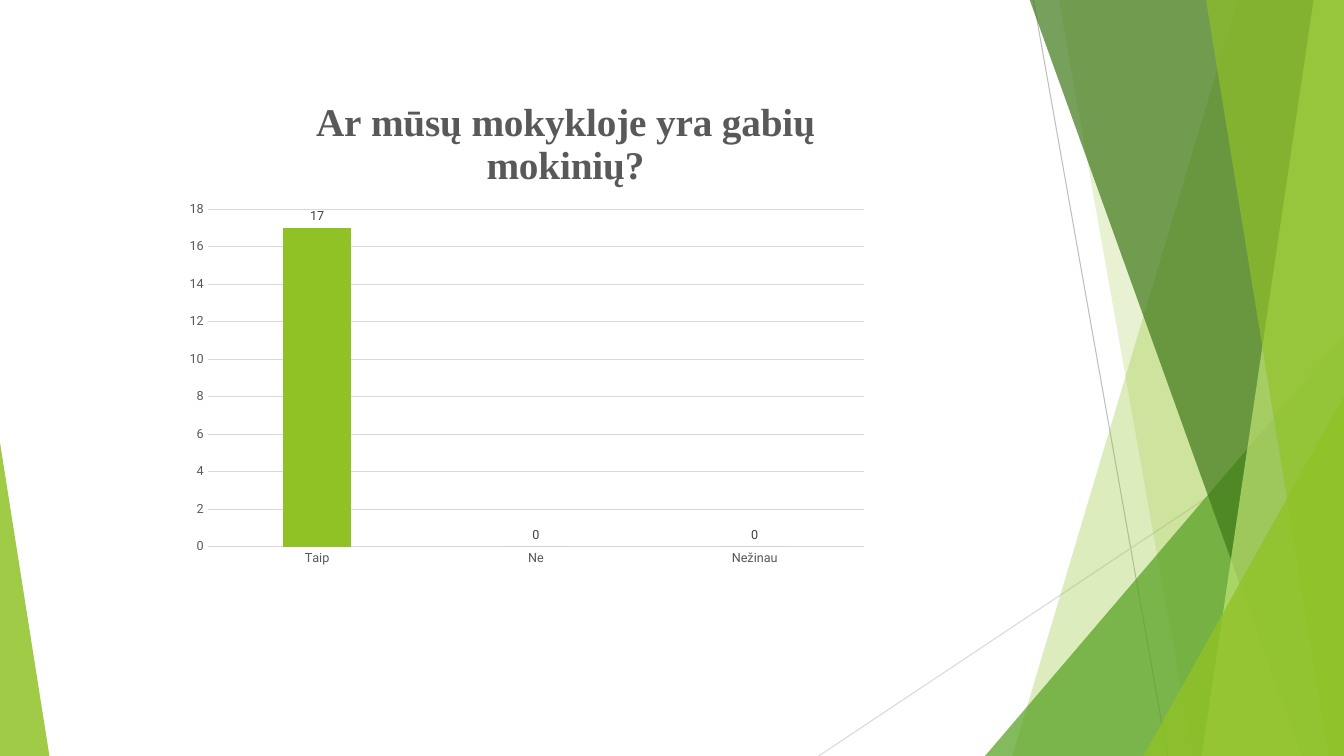
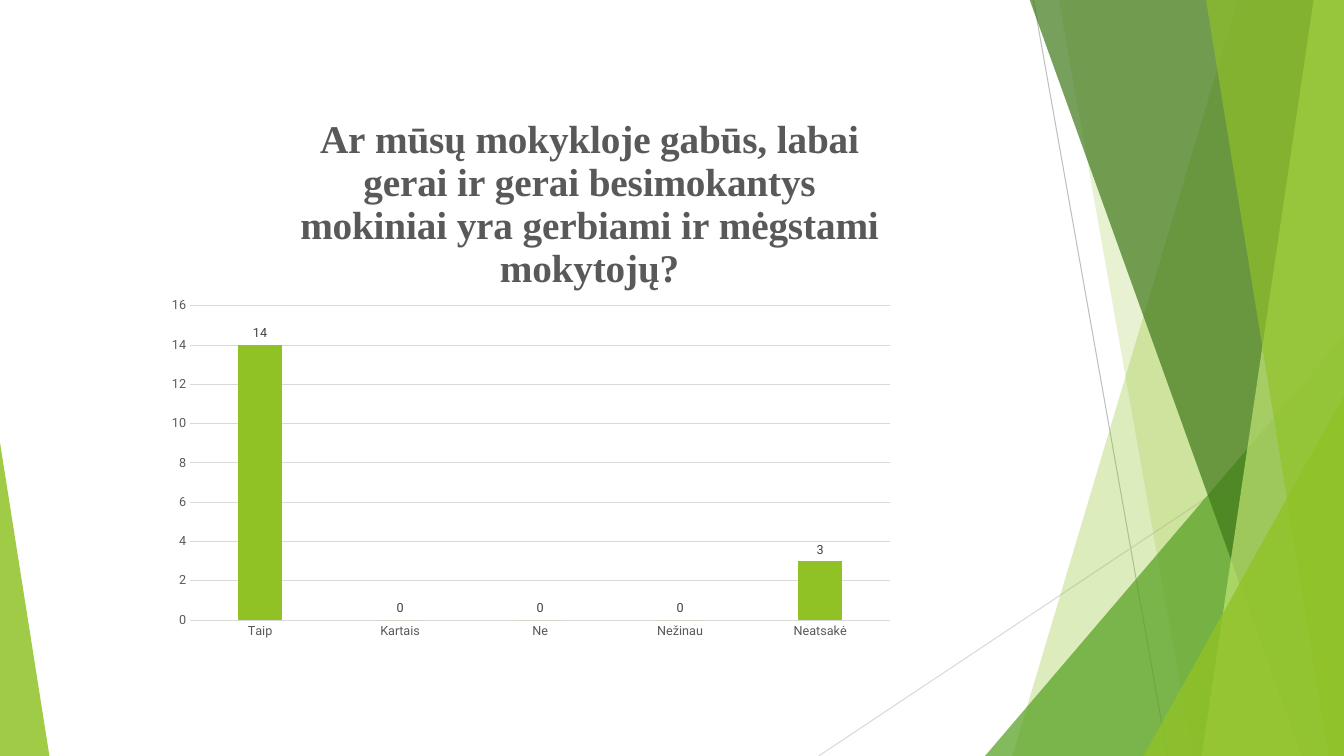
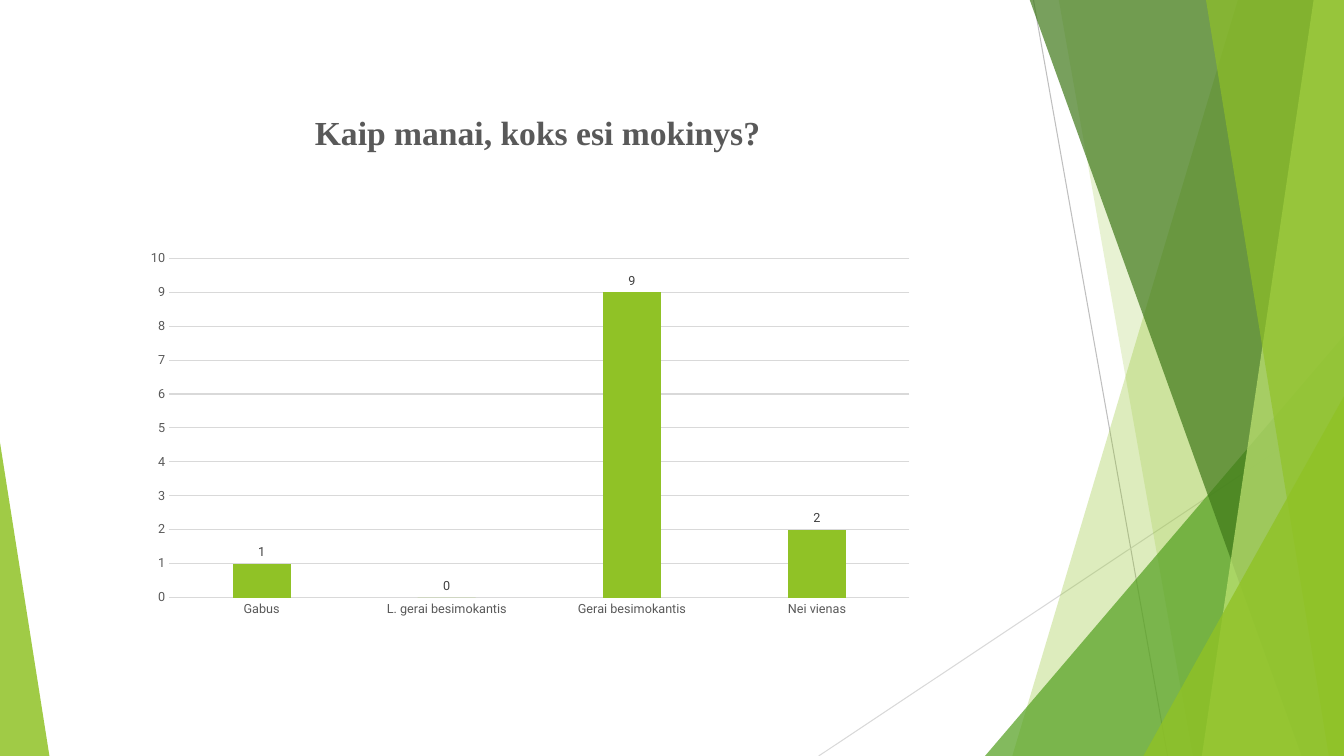
import dataclasses
import pptx
import pptx.chart.data
import pptx.dml.color
import pptx.enum.chart
import pptx.enum.shapes
import pptx.oxml
import pptx.oxml.ns
import pptx.util

Inches, Pt = pptx.util.Inches, pptx.util.Pt
RGB = pptx.dml.color.RGBColor.from_string
qn = pptx.oxml.ns.qn


@dataclasses.dataclass
class Theme:
    """Colours, fonts and type sizes of the deck."""
    lime: str = "90C226"
    leaf: str = "54A021"
    moss: str = "3F7819"
    pale: str = "C0E474"
    rule: str = "D9D9D9"
    gray: str = "BFBFBF"
    text: str = "595959"
    label: str = "404040"
    body: str = "Roboto"
    head: str = "Times New Roman"
    small: float = 9
    base: float = 10
    thin: float = 0.75


theme = Theme()
wide, high, top = 13.33, 7.5, -0.01


def style(font, size, color, name=theme.body, bold=False):
    """Set the size, colour, face and weight of a font."""
    font.size, font.name, font.bold = Pt(size), name, bold
    font.color.rgb = RGB(color)


def place(parent, index, **box):
    """Give a chart part a fixed place, in shares of the chart."""
    for old in parent.findall(qn("c:layout")):
        parent.remove(old)
    inner = '<c:layoutTarget val="inner"/>' if "w" in box else ""
    modes = "".join(f'<c:{key}Mode val="edge"/>' for key in "xy")
    sizes = "".join(f'<c:{key} val="{val}"/>' for key, val in box.items())
    parent.insert(index, pptx.oxml.parse_xml(
        f'<c:layout {pptx.oxml.ns.nsdecls("c")}><c:manualLayout>'
        f'{inner}{modes}{sizes}</c:manualLayout></c:layout>'))


deck = pptx.Presentation()
deck.slide_width, deck.slide_height = Inches(wide), Inches(high)
blank = deck.slide_layouts[6]

# Question, type size, title place, chart box, plot box, axis top and step, answers
polls = [
    ("Ar mūsų mokykloje yra gabių mokinių?", 28, (0.19, 0.02),
     (1.74, 0.8, 6.97, 4.91), (0.046, 0.26, 0.934, 0.682), 18, 2,
     {"Taip": 17, "Ne": 0, "Nežinau": 0}),
    ("Ar mūsų mokykloje gabūs, labai gerai ir gerai besimokantys mokiniai "
     "yra gerbiami ir mėgstami mokytojų?", 28, (0.2, 0.02),
     (1.37, 0.94, 7.69, 5.93), (0.067, 0.353, 0.903, 0.526), 16, 2,
     {"Taip": 14, "Kartais": 0, "Ne": 0, "Nežinau": 0, "Neatsakė": 3}),
    ("Kaip manai, koks esi mokinys?", 24, (0.22, 0.04),
     (1.34, 0.82, 7.83, 5.5), (0.043, 0.317, 0.938, 0.612), 10, 1,
     {"Gabus": 1, "L. gerai besimokantis": 0, "Gerai besimokantis": 9,
      "Nei vienas": 2}),
]
slides = [deck.slides.add_slide(blank) for poll in polls]

# Shared artwork: drawn as one group, then moved to the slide master
art = slides[0].shapes.add_group_shape()
for ends, color in [((10.25, 0, 11.58, high), theme.gray),
                    ((wide, 4.03, 8.12, high), theme.rule)]:
    line = art.shapes.add_connector(
        pptx.enum.shapes.MSO_CONNECTOR.STRAIGHT, *map(Inches, ends))
    line.line.color.rgb, line.line.width = RGB(color), Pt(theme.thin)
    line._element.spPr.append(pptx.oxml.parse_xml(
        f'<a:effectLst {pptx.oxml.ns.nsdecls("a")}/>'))

# Bands: top and bottom of the slanted edge; peaks: left, top, width, tip
bands = [
    ("band", (12.28, 10.04), theme.lime, 30),
    ("band", (10.5, 11.83), theme.lime, 20),
    ("peak", (9.77, 3.33, 3.56, 1), theme.leaf, 72),
    ("band", (10.21, 12.91), theme.moss, 70),
    ("band", (13.03, 11.92), theme.pale, 70),
    ("band", (11.96, 13.18), theme.lime, 65),
    ("peak", (11.34, 3.93, 1.99, 1), theme.lime, 80),
    ("peak", (0, 4.39, 0.49, 0), theme.lime, 85),
]
for kind, dims, color, alpha in bands:
    if kind == "band":
        start, end = dims
        pen = art.shapes.build_freeform(Inches(start), Inches(top))
        pen.add_line_segments([(Inches(x), Inches(y)) for x, y in [
            (wide, top), (wide, high), (end, high)]], close=True)
        shape = pen.convert_to_shape()
    else:
        left, peak, width, tip = dims
        shape = art.shapes.add_shape(
            pptx.enum.shapes.MSO_SHAPE.ISOSCELES_TRIANGLE,
            *map(Inches, (left, peak, width, high - peak)))
        shape.adjustments[0] = tip
    shape.shadow.inherit = False
    shape.line.fill.background()
    shape.fill.solid()
    shape.fill.fore_color.rgb = RGB(color)
    shape._element.spPr.find(".//" + qn("a:srgbClr")).append(
        pptx.oxml.parse_xml(f'<a:alpha {pptx.oxml.ns.nsdecls("a")} '
                            f'val="{alpha * 1000}"/>'))
deck.slide_master.shapes._spTree.append(art._element)

for slide, (ask, size, spot, box, area, peak, step, votes) in zip(slides, polls):
    data = pptx.chart.data.CategoryChartData()
    data.categories = list(votes)
    data.add_series("Series 1", list(votes.values()))
    chart = slide.shapes.add_chart(
        pptx.enum.chart.XL_CHART_TYPE.COLUMN_CLUSTERED,
        *map(Inches, box), data).chart
    style(chart.font, theme.base, "000000")
    chart.has_legend = False

    chart.has_title = True
    title = chart.chart_title
    title.text_frame.text = ask
    style(title.text_frame.paragraphs[0].runs[0].font, size, theme.text,
          theme.head, True)
    place(title._element, 1, **dict(zip("xy", spot)))
    place(chart._chartSpace.chart.plotArea, 0, **dict(zip("xywh", area)))

    names, scale = chart.category_axis, chart.value_axis
    for axis in (names, scale):
        axis.major_tick_mark = pptx.enum.chart.XL_TICK_MARK.NONE
        axis.minor_tick_mark = pptx.enum.chart.XL_TICK_MARK.NONE
        style(axis.tick_labels.font, theme.small, theme.text)
    scale.minimum_scale, scale.maximum_scale, scale.major_unit = 0, peak, step
    scale.has_major_gridlines = True
    for line in (names.format.line, scale.major_gridlines.format.line):
        line.color.rgb, line.width = RGB(theme.rule), Pt(theme.thin)
    scale.format.line.fill.background()

    plot = chart.plots[0]
    plot.gap_width, plot.overlap, plot.vary_by_categories = 219, -27, False
    bars = plot.series[0]
    bars.format.fill.solid()
    bars.format.fill.fore_color.rgb = RGB(theme.lime)
    labels = bars.data_labels
    labels.show_value = True
    labels.position = pptx.enum.chart.XL_LABEL_POSITION.OUTSIDE_END
    style(labels.font, theme.small, theme.label)

deck.save("out.pptx")
